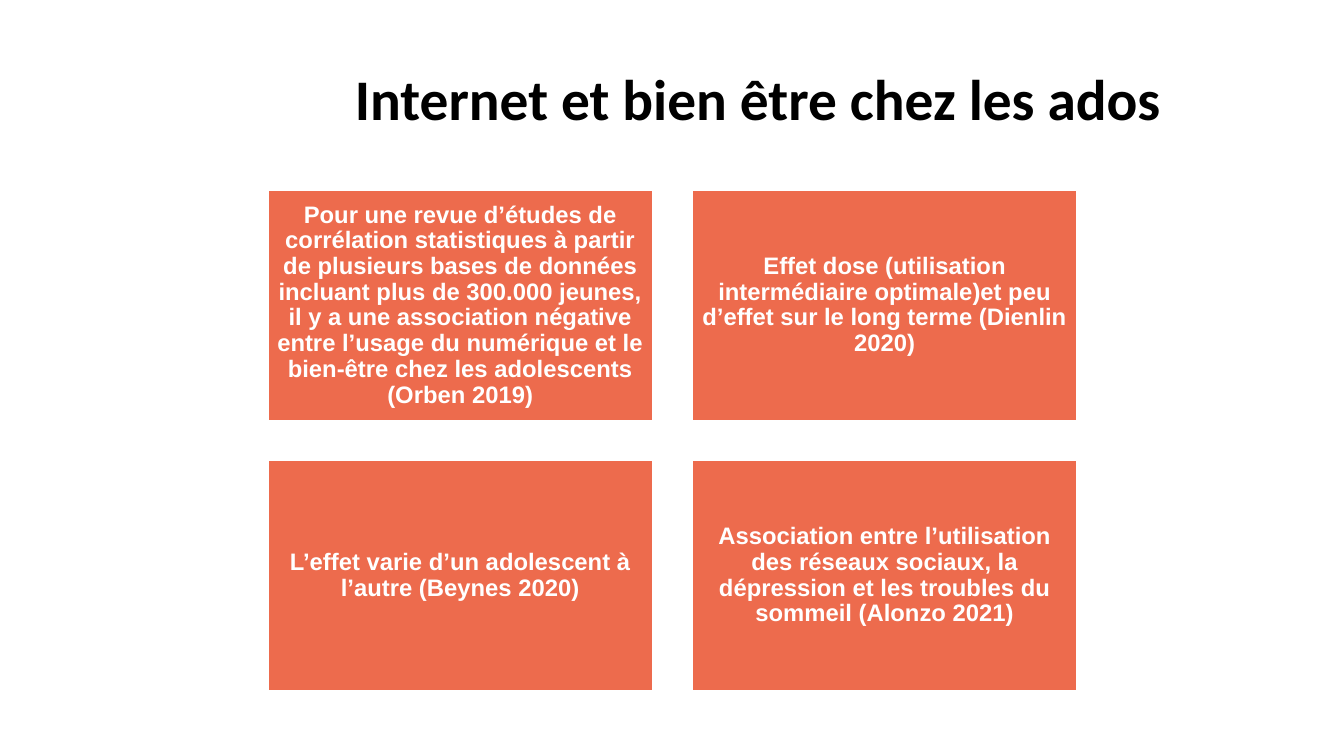
import pptx
import pptx.util
import pptx.dml.color
import pptx.enum.shapes
import pptx.enum.text
from dataclasses import dataclass

Inches = pptx.util.Inches
Align = pptx.enum.text.PP_ALIGN


@dataclass(frozen=True)
class Theme:
    coral: str = "ED6B4D"
    white: str = "FFFFFF"
    black: str = "000000"
    head: str = "Calibri"
    body: str = "Arial"
    large: int = 41
    small: int = 17


THEME = Theme()
TITLE = "Internet et bien être chez les ados"
CARDS = [
    "Pour une revue d’études de corrélation statistiques à partir de plusieurs "
    "bases de données incluant plus de 300.000 jeunes, il y a une association "
    "négative entre l’usage du numérique et le bien-être chez les adolescents "
    "(Orben 2019)",
    "Effet dose (utilisation intermédiaire optimale)et peu d’effet sur le long "
    "terme (Dienlin 2020)",
    "L’effet varie d’un adolescent à l’autre (Beynes 2020)",
    "Association entre l’utilisation des réseaux sociaux, la dépression et les "
    "troubles du sommeil (Alonzo 2021)",
]


def color(code):
    return pptx.dml.color.RGBColor.from_string(code)


def write(shape, text, *, font, size, ink, align, inset=None):
    frame = shape.text_frame
    frame.word_wrap = True
    frame.auto_size = pptx.enum.text.MSO_AUTO_SIZE.NONE
    frame.vertical_anchor = pptx.enum.text.MSO_ANCHOR.MIDDLE
    if inset is not None:
        frame.margin_left = frame.margin_right = Inches(inset)
        frame.margin_top = frame.margin_bottom = Inches(inset)
    para = frame.paragraphs[0]
    para.alignment = align
    para.line_spacing = 0.9
    run = para.add_run()
    run.text = text
    run.font.name = font
    run.font.size = pptx.util.Pt(size)
    run.font.bold = True
    run.font.color.rgb = color(ink)


def add_title(slide, left, top, width, height):
    title = slide.shapes.title
    title.left, title.top = Inches(left), Inches(top)
    title.width, title.height = Inches(width), Inches(height)
    write(title, TITLE, font=THEME.head, size=THEME.large, ink=THEME.black,
          align=Align.LEFT)


def add_cards(slide, left, top, width, height, gap=0.38, cols=2):
    rows = len(CARDS) // cols
    wide = (width - gap * (cols - 1)) / cols
    high = (height - gap * (rows - 1)) / rows
    for i, text in enumerate(CARDS):
        row, col = divmod(i, cols)
        card = slide.shapes.add_shape(
            pptx.enum.shapes.MSO_SHAPE.RECTANGLE,
            Inches(left + col * (wide + gap)), Inches(top + row * (high + gap)),
            Inches(wide), Inches(high))
        card.shadow.inherit = False
        card.fill.solid()
        card.fill.fore_color.rgb = color(THEME.coral)
        card.line.color.rgb = color(THEME.white)
        card.line.width = pptx.util.Pt(2)
        write(card, text, font=THEME.body, size=THEME.small, ink=THEME.white,
              align=Align.CENTER, inset=0.07)


def main():
    deck = pptx.Presentation()
    deck.slide_width, deck.slide_height = Inches(13.33), Inches(7.5)
    slide = deck.slides.add_slide(deck.slide_layouts[5])
    # Heading
    add_title(slide, 3.42, 0.64, 8.86, 0.74)
    # Findings, two by two
    add_cards(slide, 2.65, 1.88, 8.04, 4.98)
    deck.save("out.pptx")


if __name__ == "__main__":
    main()
